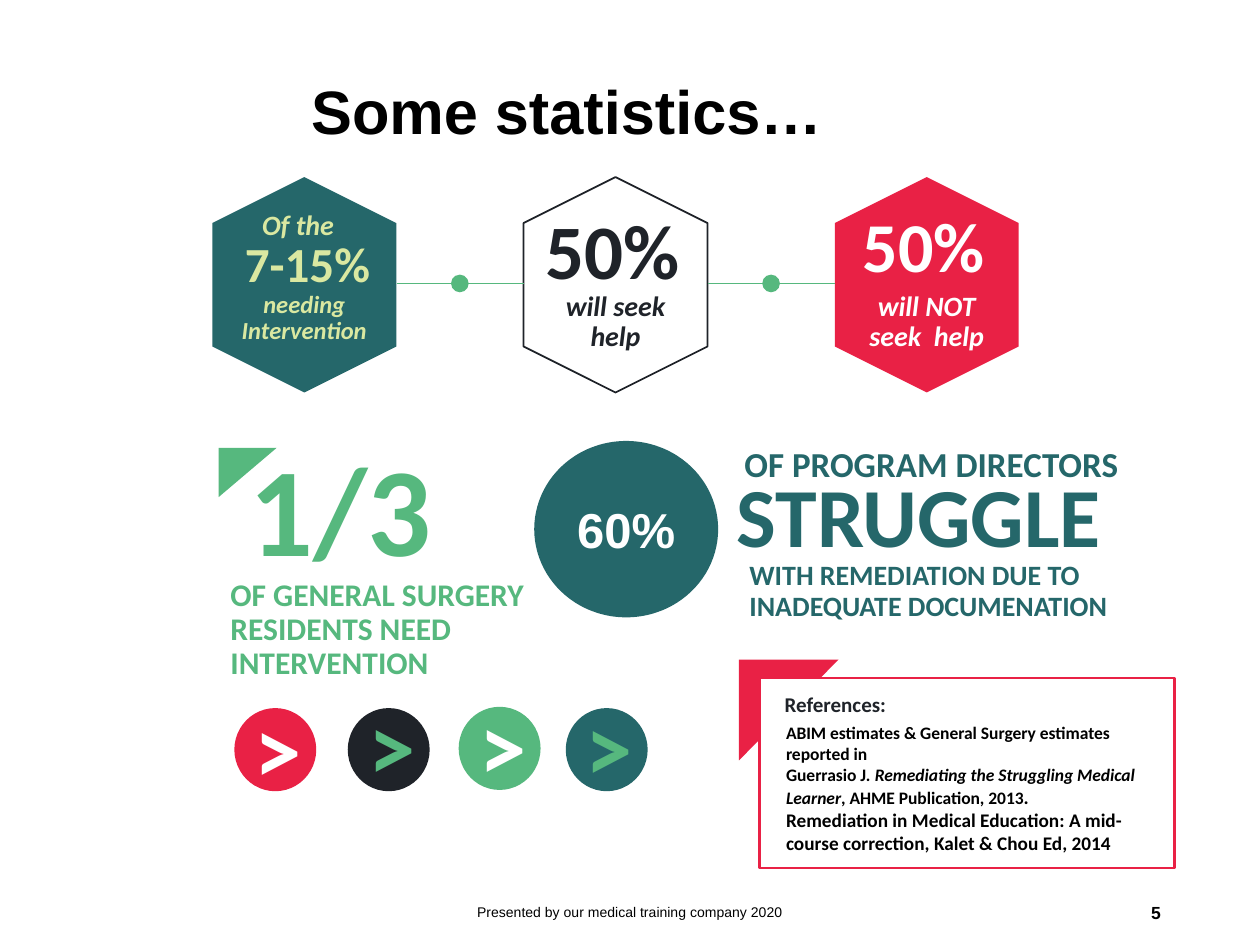
from lxml.etree import SubElement
from pptx import Presentation
from pptx.dml.color import RGBColor
from pptx.enum.shapes import MSO_CONNECTOR, MSO_SHAPE as Shape
from pptx.enum.text import MSO_ANCHOR as Anchor, PP_ALIGN as Align
from pptx.oxml.ns import qn
from pptx.util import Inches, Pt

COLORS = {
    "teal": "25676A", "dark": "1F2329", "red": "E92145", "green": "56B87E",
    "lime": "DAE8A1", "white": "FFFFFF", "black": "000000",
}
RGB = {name: RGBColor.from_string(value) for name, value in COLORS.items()}

prs = Presentation()
prs.slide_width, prs.slide_height = Inches(10), Inches(7.5)
slide = prs.slides.add_slide(prs.slide_layouts[5])


def add_figure(preset, box, fill=None, line=None, width=1, rotation=0):
    """Add a flat preset shape; a missing fill or line stays invisible."""
    figure = slide.shapes.add_shape(preset, *map(Inches, box))
    figure.shadow.inherit = False
    figure.rotation = rotation
    if fill:
        figure.fill.solid()
        figure.fill.fore_color.rgb = RGB[fill]
    else:
        figure.fill.background()
    if line:
        figure.line.color.rgb = RGB[line]
        figure.line.width = Pt(width)
    else:
        figure.line.fill.background()
    return figure


def write(holder, paragraphs, size, color, align=Align.LEFT, spacing=1.0,
          anchor=Anchor.TOP, name="Calibri", bold=True, italic=False):
    """Fill a shape, or a new text box at (left, top, width, height).

    A paragraph is a string or a list of (text, font changes) runs.
    """
    if isinstance(holder, tuple):
        holder = slide.shapes.add_textbox(*map(Inches, holder))
    frame = holder.text_frame
    frame.word_wrap = True
    frame.vertical_anchor = anchor
    for index, content in enumerate(paragraphs):
        paragraph = frame.add_paragraph() if index else frame.paragraphs[0]
        paragraph.alignment = align
        paragraph.line_spacing = spacing
        runs = [(content, {})] if isinstance(content, str) else content
        for text, changes in runs:
            run = paragraph.add_run()
            run.text = text
            run.font.color.rgb = RGB[color]
            look = {"name": name, "size": size, "bold": bold, "italic": italic, **changes}
            for attribute, value in look.items():
                setattr(run.font, attribute, Pt(value) if attribute == "size" else value)


# Title
title = slide.shapes.title
title.left, title.top, title.width, title.height = map(Inches, (2.37, 0.16, 4.71, 1.5))
write(title, ["Some statistics…"], 35, "black", spacing=0.9, anchor=Anchor.MIDDLE, name="Arial")

# Row of hexagons, joined by dotted links
HEX_LEFT, HEX_STEP = 1.56, 2.47
hexagons = [
    ("teal", None, "lime", (1.77, 1.8, 1.34, 0.52), "7-15%", 28,
     (1.77, 2.27, 1.29, 0.53), "needing Intervention", 14),
    (None, "dark", "dark", (4.19, 1.56, 1.34, 0.84), "50%", 44,
     (4.24, 2.27, 1.29, 0.53), "will seek help", 16),
    ("red", None, "white", (6.66, 1.56, 1.34, 0.77), "50%", 40,
     (6.71, 2.27, 1.29, 0.53), "will NOT seek  help", 16),
]
for index, (fill, line, ink, share_box, share, share_size,
            label_box, label, label_size) in enumerate(hexagons):
    left = HEX_LEFT + index * HEX_STEP
    add_figure(Shape.HEXAGON, (left, 1.53, 1.71, 1.46), fill, line, rotation=90)
    write(share_box, [share], share_size, ink, Align.CENTER)
    write(label_box, [label], label_size, ink, Align.CENTER, 0.9, italic=True)
write((1.72, 1.63, 1.29, 0.31), ["Of the"], 16, "lime", Align.CENTER, 0.9, italic=True)

for index in range(len(hexagons) - 1):
    left = 3.15 + index * HEX_STEP
    link = slide.shapes.add_connector(
        MSO_CONNECTOR.STRAIGHT, Inches(left), Inches(2.25), Inches(left + 1.01), Inches(2.25))
    link.line.color.rgb = RGB["green"]
    link.line.width = Pt(1)
    SubElement(link._element.spPr, qn("a:effectLst"))
    add_figure(Shape.OVAL, (left + 0.43, 2.18, 0.14, 0.14), "green")

# One third of residents
add_figure(Shape.RIGHT_TRIANGLE, (1.77, 3.52, 0.39, 0.46), "green", rotation=90)
write((1.88, 3.37, 1.99, 1.31), ["1/3"], 72, "green")
write((1.73, 4.55, 2.81, 0.83),
      ["OF GENERAL SURGERY", "RESIDENTS NEED", "INTERVENTION"], 18, "green", spacing=0.9)

# Program directors
directors = add_figure(Shape.OVAL, (4.24, 3.5, 1.46, 1.4), "teal")
write(directors, ["60%"], 28, "white", Align.CENTER, anchor=Anchor.MIDDLE, name="Arial")
for box, text, size in [
    ((5.81, 3.5, 3.37, 0.37), "OF PROGRAM DIRECTORS", 20),
    ((5.75, 3.72, 3.57, 0.83), "STRUGGLE", 48),
    ((5.85, 4.41, 3.37, 0.59), "WITH REMEDIATION DUE TO INADEQUATE DOCUMENATION", 16),
]:
    write(box, [text], size, "teal", spacing=0.9)

# Row of arrow badges
for left, top, fill, ink, mark_box in [
    (1.86, 5.62, "red", "white", (1.7, 5.43, 1.01, 0.91)),
    (2.76, 5.62, "dark", "green", (2.7, 5.4, 0.83, 0.92)),
    (3.64, 5.61, "green", "white", (3.58, 5.4, 0.83, 0.92)),
    (4.49, 5.62, "teal", "green", (4.42, 5.41, 0.83, 0.92)),
]:
    add_figure(Shape.OVAL, (left, top, 0.65, 0.66), fill)
    write(mark_box, [">"], 54, ink, Align.CENTER)

# References
add_figure(Shape.RIGHT_TRIANGLE, (5.86, 5.24, 0.8, 0.79), "red", rotation=90)
add_figure(Shape.RECTANGLE, (6.03, 5.38, 3.29, 1.51), "white", "red", 1.5)
write((6.13, 5.46, 2.5, 0.45), ["References:"], 12, "dark", spacing=0.9)
write((6.14, 5.68, 3.17, 1.4), [
    "ABIM estimates & General Surgery estimates reported in",
    [("Guerrasio J", {}),
     (". Remediating the Struggling Medical Learner", {"italic": True}),
     (", AHME Publication, 2013", {}),
     (".", {"size": 11})],
    [("Remediation in Medical Education: A mid-course correction, Kalet & Chou Ed, 2014",
      {"size": 11})],
], 10, "black")

# Footer
write((3.31, 7.04, 3.38, 0.4), ["Presented by our medical training company 2020"], 8,
      "black", Align.CENTER, anchor=Anchor.MIDDLE, name="Arial", bold=False)
write((7.06, 7.04, 2.25, 0.4), ["5"], 10, "black", Align.RIGHT,
      anchor=Anchor.MIDDLE, name="Arial")

prs.save("out.pptx")
